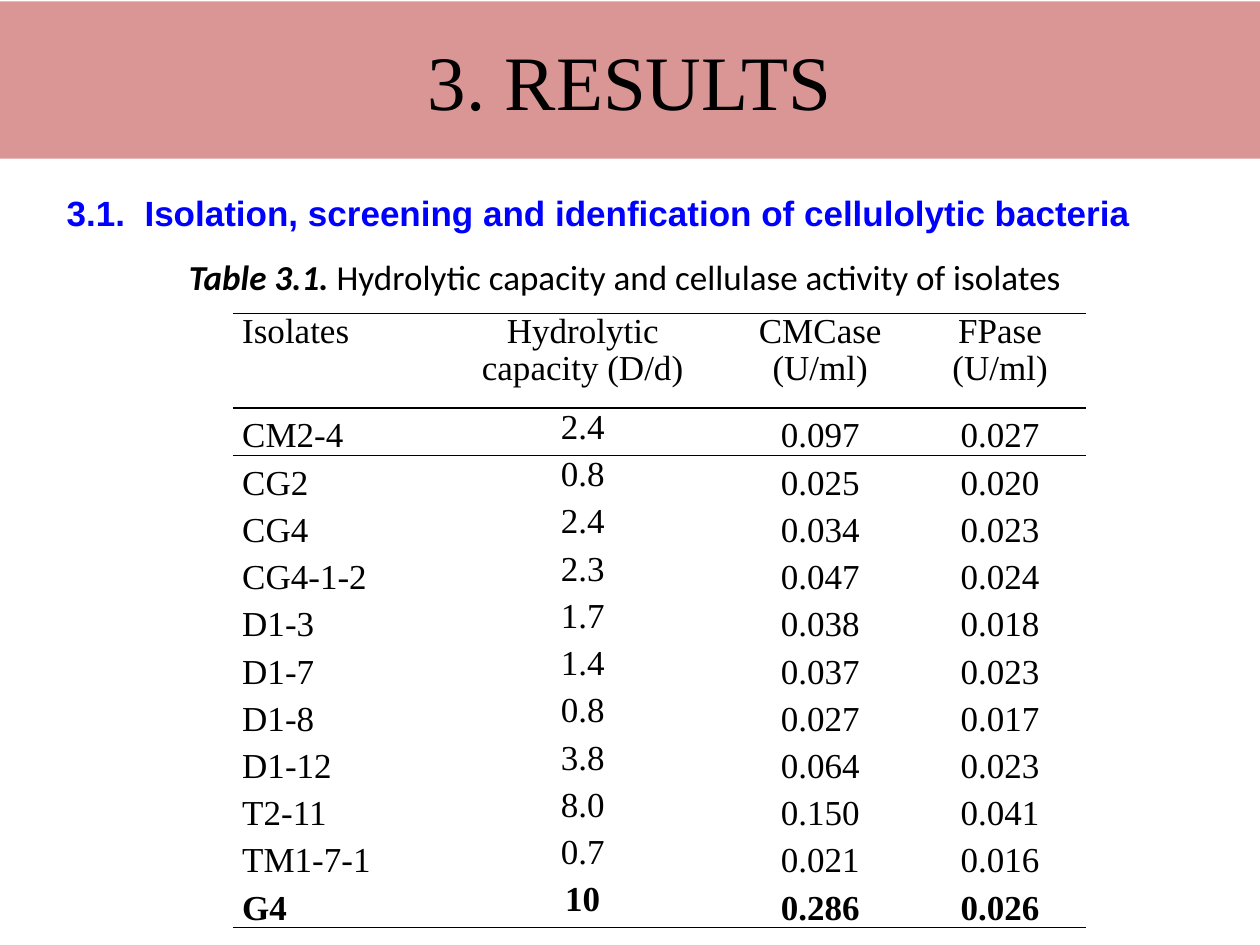
from dataclasses import dataclass

from lxml import etree
from pptx import Presentation
from pptx.dml.color import RGBColor
from pptx.enum.shapes import MSO_SHAPE
from pptx.enum.text import MSO_ANCHOR, PP_ALIGN
from pptx.oxml.ns import qn
from pptx.util import Pt

RECT = MSO_SHAPE.RECTANGLE
TOP, MID, LOW = MSO_ANCHOR.TOP, MSO_ANCHOR.MIDDLE, MSO_ANCHOR.BOTTOM
LEFT, CENTER, JUST = PP_ALIGN.LEFT, PP_ALIGN.CENTER, PP_ALIGN.JUSTIFY
HEX = {"band": "D99694", "ink": "000000", "head": "0000FF"}
SERIF = "Times New Roman"
PLAIN = "{2D5ABB26-0587-4C30-8999-92F81FD0307C}"

WIDTHS = (118, 164, 107.5, 98)
HEAD = ("Isolates", "Hydrolytic capacity (D/d)", "CMCase (U/ml)", "FPase\n(U/ml)")


@dataclass
class Row:
    name: str
    ratio: str
    cmc: str
    fpa: str

    def cells(self) -> tuple[str, ...]:
        return self.name, self.ratio, self.cmc, self.fpa


ROWS = (
    Row("CM2-4", "2.4", "0.097", "0.027"),
    Row("CG2", "0.8", "0.025", "0.020"),
    Row("CG4", "2.4", "0.034", "0.023"),
    Row("CG4-1-2", "2.3", "0.047", "0.024"),
    Row("D1-3", "1.7", "0.038", "0.018"),
    Row("D1-7", "1.4", "0.037", "0.023"),
    Row("D1-8", "0.8", "0.027", "0.017"),
    Row("D1-12", "3.8", "0.064", "0.023"),
    Row("T2-11", "8.0", "0.150", "0.041"),
    Row("TM1-7-1", "0.7", "0.021", "0.016"),
    Row("G4", "10", "0.286", "0.026"),
)


def style(para, face: str, size: float, ink: str, align, bold: bool = False) -> None:
    para.alignment = align
    font = para.font
    font.name, font.size, font.bold = face, Pt(size), bold
    font.color.rgb = RGBColor.from_string(HEX[ink])


def rule(cell, *sides: str) -> None:
    props = cell._tc.get_or_add_tcPr()
    for spot, side in enumerate(sides):
        line = etree.Element(qn(f"a:ln{side}"), w=str(Pt(1)))
        fill = etree.SubElement(line, qn("a:solidFill"))
        etree.SubElement(fill, qn("a:srgbClr"), val=HEX["ink"])
        props.insert(spot, line)


def put(cell, text: str, row: int, col: int) -> None:
    last = row == len(ROWS)
    cell.text = text
    cell.fill.background()
    cell.margin_left = cell.margin_right = Pt(5.4)
    cell.margin_top = cell.margin_bottom = 0
    cell.vertical_anchor = TOP if row == 0 or col == 1 else LOW
    for para in cell.text_frame.paragraphs:
        style(para, SERIF, 20, "ink", CENTER if col else JUST, last)
        if row == 0:
            para.line_spacing = 0.95
    if row == 0:
        rule(cell, "T", "B")
    elif row == 1:
        rule(cell, "T")
    elif last:
        rule(cell, "B")


def band(slide) -> None:
    box = slide.shapes.add_shape(RECT, 0, Pt(0.75), Pt(720), Pt(90))
    box.shadow.inherit = False
    box.fill.solid()
    box.fill.fore_color.rgb = RGBColor.from_string(HEX["band"])
    box.line.fill.background()
    frame = box.text_frame
    frame.text = "3. RESULTS"
    frame.vertical_anchor = MID
    style(frame.paragraphs[0], SERIF, 44, "ink", CENTER)


def grid(slide) -> None:
    high = 54 + 27 * len(ROWS)
    table = slide.shapes.add_table(
        len(ROWS) + 1, len(HEAD), Pt(133), Pt(179.25), Pt(sum(WIDTHS)), Pt(high)
    ).table
    table._tbl.tblPr.find(qn("a:tableStyleId")).text = PLAIN
    table.first_row = table.horz_banding = False
    for col, wide in enumerate(WIDTHS):
        table.columns[col].width = Pt(wide)
    for row, texts in enumerate((HEAD, *(item.cells() for item in ROWS))):
        table.rows[row].height = Pt(27 if row else 54)
        for col, text in enumerate(texts):
            put(table.cell(row, col), text, row, col)


def title(slide) -> None:
    box = slide.shapes.add_textbox(Pt(75), Pt(142), Pt(564.5), Pt(31.5))
    frame = box.text_frame
    frame.word_wrap = False
    frame.vertical_anchor = MID
    para = frame.paragraphs[0]
    style(para, "Calibri", 20, "ink", CENTER)
    label = para.add_run()
    label.text = "Table 3.1. "
    label.font.bold = label.font.italic = True
    para.add_run().text = "Hydrolytic capacity and cellulase activity of isolates"


def topic(slide) -> None:
    box = slide.shapes.add_textbox(Pt(31), Pt(106), Pt(657.5), Pt(31.5))
    frame = box.text_frame
    frame.word_wrap = True
    para = frame.paragraphs[0]
    para.text = "3.1.\tIsolation, screening and idenfication of cellulolytic bacteria"
    tabs = etree.SubElement(para._p.get_or_add_pPr(), qn("a:tabLst"))
    etree.SubElement(tabs, qn("a:tab"), pos=str(Pt(44.5)), algn="l")
    style(para, "Arial", 20, "head", LEFT, True)


def main() -> None:
    deck = Presentation()
    deck.slide_width, deck.slide_height = Pt(720), Pt(540)
    slide = deck.slides.add_slide(deck.slide_layouts[6])
    for draw in (band, grid, title, topic):
        draw(slide)
    deck.save("out.pptx")


if __name__ == "__main__":
    main()
